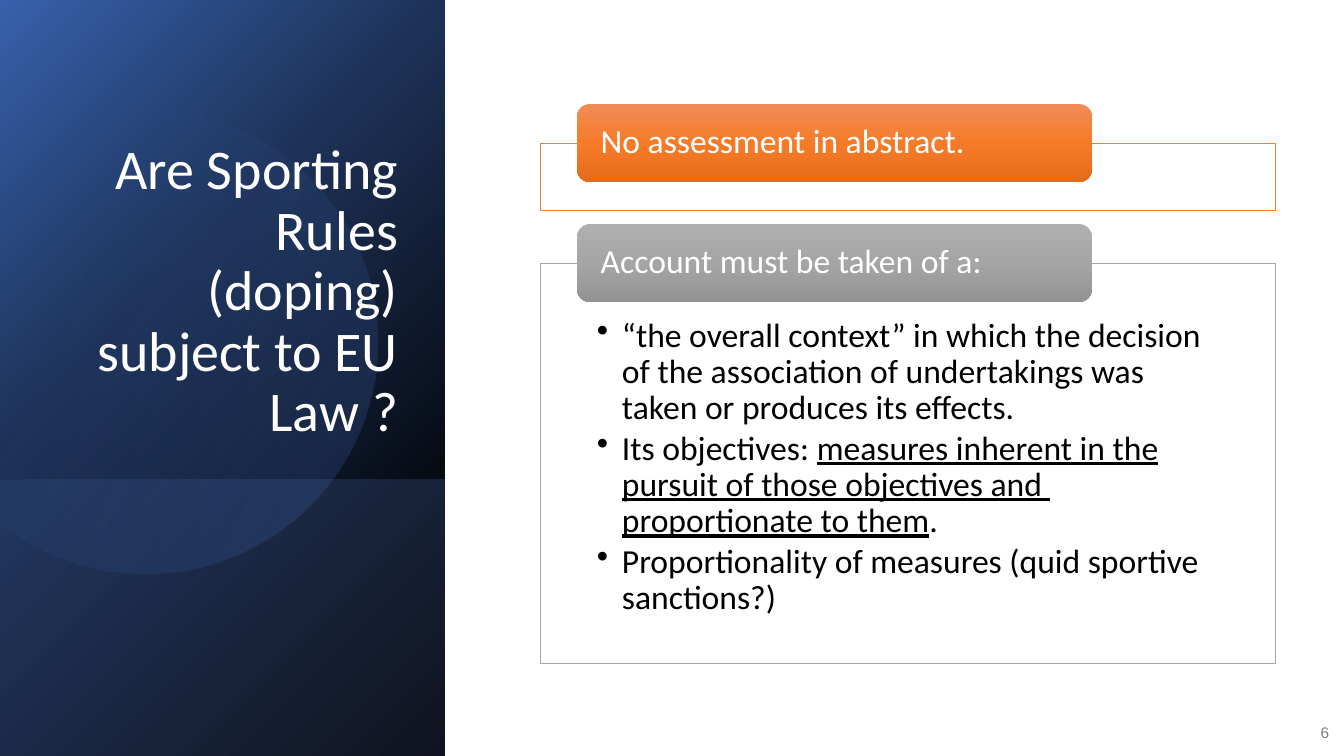
import math

from lxml import etree
from pptx import Presentation
from pptx import util as u
from pptx.dml.color import RGBColor
from pptx.enum import shapes, text
from pptx.oxml import ns

WHITE = RGBColor(0xFF, 0xFF, 0xFF)
BLACK = RGBColor(0x00, 0x00, 0x00)
GREY = RGBColor(0x80, 0x80, 0x80)
ORANGE_LINE = RGBColor(0xED, 0x7D, 0x31)
GREY_LINE = RGBColor(0xA5, 0xA5, 0xA5)

# Gradient stops: position %, colour, opacity %
PANEL = [(0, RGBColor(0x37, 0x61, 0xAC), 100), (38, RGBColor(0x1D, 0x31, 0x56), 100),
         (76, RGBColor(0x07, 0x0B, 0x14), 100), (100, BLACK, 100)]
PANEL_FOOT = [(0, RGBColor(0x22, 0x38, 0x60), 100), (100, RGBColor(0x10, 0x13, 0x1F), 100)]
DISC = [(25, RGBColor(0x44, 0x72, 0xC4), 0), (100, RGBColor(0x44, 0x72, 0xC4), 26)]
ORANGE = [(0, RGBColor(0xF1, 0x8C, 0x57), 100), (50, RGBColor(0xF6, 0x7B, 0x28), 100),
          (100, RGBColor(0xE5, 0x6C, 0x19), 100)]
GREYS = [(0, RGBColor(0xAF, 0xAF, 0xAF), 100), (50, RGBColor(0xA5, 0xA5, 0xA5), 100),
         (100, RGBColor(0x93, 0x93, 0x93), 100)]

TITLE = "Are Sporting Rules (doping) subject to EU Law ?"
NUMBER = "6"
# Heading, gradient, frame line, frame top, frame height, bullets of (text, underlined) runs
SECTIONS = [
    ("No assessment in abstract.", ORANGE, ORANGE_LINE, 143, 67, []),
    ("Account must be taken of a:", GREYS, GREY_LINE, 263, 400, [
        [("“the overall context” in which the decision of the association of "
          "undertakings was taken or produces its effects.", False)],
        [("Its objectives: ", False),
         ("measures inherent in the pursuit of those objectives and  "
          "proportionate to them", True),
         (".", False)],
        [("Proportionality of measures (quid sportive sanctions?)", False)],
    ]),
]

PANEL_W, SLIDE_H, FOOT_TOP = 445, 756, 480
DISC_X, DISC_Y, DISC_R = 145, 342, 232
FRAME_X, FRAME_W = 540, 735
TAB_X, TAB_W, TAB_H, TAB_RISE = 577, 515, 78, 39


def px(n):
    return u.Emu(round(n * 914400 / 100.8))


def gradient(sp, stops, angle):
    """Fill with a linear gradient; angle is in degrees clockwise."""
    sp.fill.gradient()
    grad = sp.fill._xPr.find(ns.qn("a:gradFill"))
    for child in list(grad):
        grad.remove(child)
    gs_lst = etree.SubElement(grad, ns.qn("a:gsLst"))
    for pos, color, opacity in stops:
        gs = etree.SubElement(gs_lst, ns.qn("a:gs"), pos=str(pos * 1000))
        clr = etree.SubElement(gs, ns.qn("a:srgbClr"), val=str(color))
        if opacity < 100:
            etree.SubElement(clr, ns.qn("a:alpha"), val=str(opacity * 1000))
    etree.SubElement(grad, ns.qn("a:lin"), ang=str(angle * 60000), scaled="0")


def add_box(s, kind, x, y, w, h):
    sp = s.shapes.add_shape(kind, px(x), px(y), px(w), px(h))
    sp.shadow.inherit = False
    sp.line.fill.background()
    return sp


def set_insets(tf, left, top, right, bottom):
    tf.margin_left, tf.margin_top = px(left), px(top)
    tf.margin_right, tf.margin_bottom = px(right), px(bottom)


def style(p, size, color, align, font="Calibri", spacing=0.9):
    p.font.size, p.font.name = u.Pt(size), font
    p.font.color.rgb = color
    p.alignment, p.line_spacing = align, spacing


def add_bullets(tf, bullets):
    for i, runs in enumerate(bullets):
        p = tf.paragraphs[0] if i == 0 else tf.add_paragraph()
        style(p, 24, BLACK, text.PP_ALIGN.LEFT)
        p.space_after = u.Pt(3)
        pPr = p._p.get_or_add_pPr()
        pPr.set("marL", str(px(25)))
        pPr.set("indent", str(-px(25)))
        bullet = etree.Element(ns.qn("a:buChar"), char="•")
        pPr.find(ns.qn("a:defRPr")).addprevious(bullet)
        for words, underlined in runs:
            r = p.add_run()
            r.text = words
            if underlined:
                r.font.underline = True


def add_panel(s):
    rect = shapes.MSO_SHAPE.RECTANGLE
    gradient(add_box(s, rect, 0, 0, PANEL_W, SLIDE_H), PANEL, 45)
    foot = add_box(s, rect, 0, FOOT_TOP, PANEL_W, SLIDE_H - FOOT_TOP)
    gradient(foot, PANEL_FOOT, 45)
    # The disc is cut off at the slide's left edge
    cut = math.acos(-DISC_X / DISC_R)
    angles = [cut * (i / 40 - 1) for i in range(81)]
    points = [(px(DISC_X + DISC_R * math.cos(a)), px(DISC_Y + DISC_R * math.sin(a)))
              for a in angles]
    builder = s.shapes.build_freeform(*points[0])
    builder.add_line_segments(points[1:], close=True)
    disc = builder.convert_to_shape()
    disc.shadow.inherit = False
    disc.line.fill.background()
    gradient(disc, DISC, 30)


def add_title(s):
    sp = s.shapes.title
    s.shapes._spTree.append(sp._element)  # above the panel
    sp.left, sp.top, sp.width, sp.height = px(64), px(185), px(344), px(264)
    tf = sp.text_frame
    tf.text = TITLE
    tf.word_wrap, tf.auto_size = True, text.MSO_AUTO_SIZE.NONE
    tf.vertical_anchor = text.MSO_ANCHOR.BOTTOM
    style(tf.paragraphs[0], 40, WHITE, text.PP_ALIGN.RIGHT)


def add_section(s, heading, stops, line, top, height, bullets):
    frame = add_box(s, shapes.MSO_SHAPE.RECTANGLE, FRAME_X, top, FRAME_W, height)
    frame.fill.solid()
    frame.fill.fore_color.rgb = WHITE
    frame.line.color.rgb, frame.line.width = line, u.Pt(0.5)
    tf = frame.text_frame
    tf.word_wrap, tf.vertical_anchor = True, text.MSO_ANCHOR.TOP
    set_insets(tf, 57, 55, 57, 19)
    add_bullets(tf, bullets)

    tab = add_box(s, shapes.MSO_SHAPE.ROUNDED_RECTANGLE, TAB_X, top - TAB_RISE, TAB_W, TAB_H)
    gradient(tab, stops, 90)
    tf = tab.text_frame
    tf.text = heading
    tf.word_wrap, tf.vertical_anchor = True, text.MSO_ANCHOR.MIDDLE
    set_insets(tf, 20, 0, 20, 0)
    style(tf.paragraphs[0], 24, WHITE, text.PP_ALIGN.LEFT)


def add_number(s):
    tf = s.shapes.add_textbox(px(1290), px(712), px(49), px(40)).text_frame
    tf.text = NUMBER
    tf.word_wrap, tf.vertical_anchor = True, text.MSO_ANCHOR.MIDDLE
    style(tf.paragraphs[0], 11, GREY, text.PP_ALIGN.RIGHT, "Arial", 1.0)


def main():
    prs = Presentation()
    prs.slide_width, prs.slide_height = px(1344), px(SLIDE_H)
    s = prs.slides.add_slide(prs.slide_layouts[5])
    add_panel(s)
    add_title(s)
    add_number(s)
    for section in SECTIONS:
        add_section(s, *section)
    prs.save("out.pptx")


if __name__ == "__main__":
    main()
